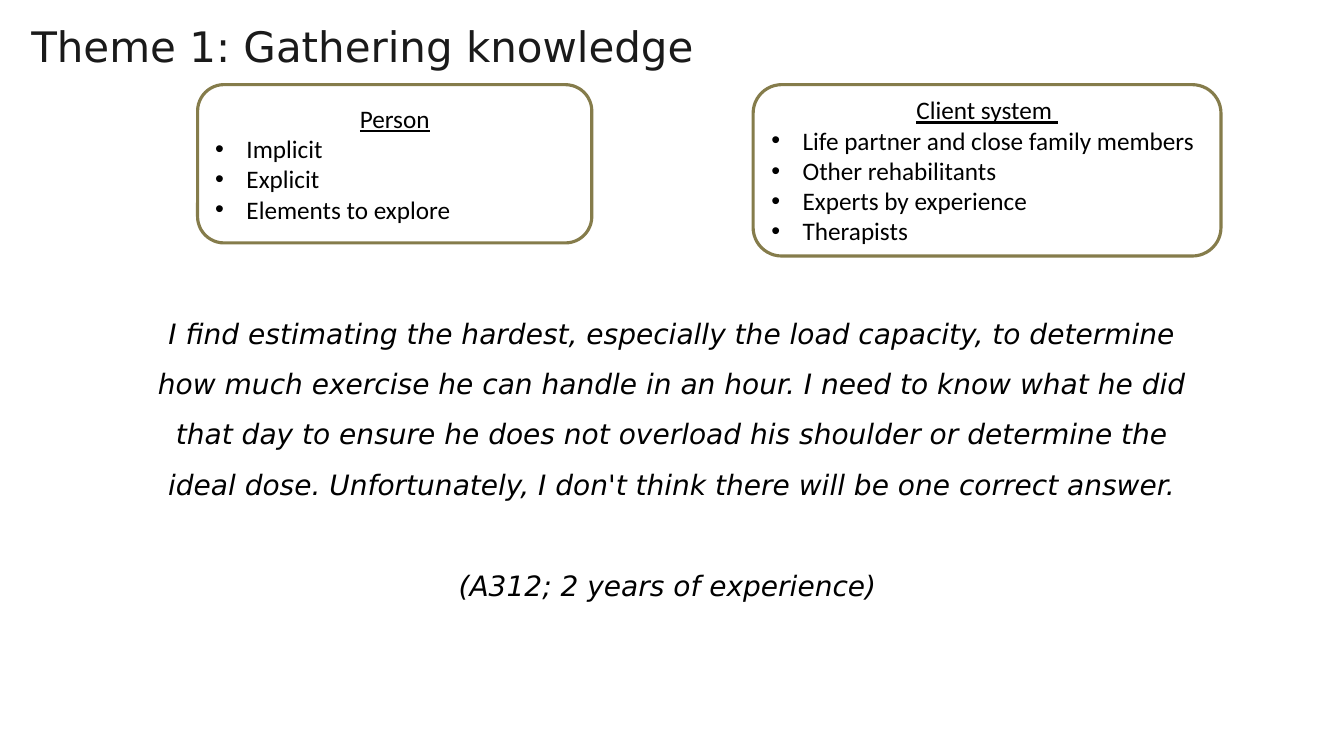
"""Build the slide on gathering knowledge, with two source boxes and a quote."""
from lxml.etree import SubElement
from pptx import Presentation
from pptx.dml.color import RGBColor
from pptx.enum.shapes import MSO_SHAPE
from pptx.enum.text import MSO_ANCHOR, MSO_AUTO_SIZE, PP_ALIGN
from pptx.oxml.ns import qn
from pptx.util import Inches, Pt

INK = RGBColor(0x1A, 0x1A, 0x1A)
BLACK = RGBColor(0, 0, 0)
OLIVE = RGBColor(0x85, 0x7C, 0x4B)

TITLE = {"name": "DejaVu Sans", "size": Pt(30)}
QUOTE = {"name": "DejaVu Sans", "size": Pt(20), "italic": True}
HEADING = {"name": "Calibri", "size": Pt(18), "underline": True}
ITEM = {"name": "Calibri", "size": Pt(18), "underline": False}

BOXES = [
    (1.96, 3.91, 1.57, "Person",
     ["Implicit", "Explicit", "Elements to explore"]),
    (7.47, 4.64, 1.7, "Client system ",
     ["Life partner and close family members", "Other rehabilitants",
      "Experts by experience", "Therapists"]),
]
QUOTE_TEXT = (
    "I find estimating the hardest, especially the load capacity, to determine "
    "how much exercise he can handle in an hour. I need to know what he did "
    "that day to ensure he does not overload his shoulder or determine the "
    "ideal dose. Unfortunately, I don't think there will be one correct answer."
)
CITATION = "(A312; 2 years of experience) "


def write(p, text, style, color=BLACK):
    r = p.add_run()
    r.text = text
    for name, value in style.items():
        setattr(r.font, name, value)
    r.font.color.rgb = color


def add_text_box(s, left, top, width, height):
    tf = s.shapes.add_textbox(
        Inches(left), Inches(top), Inches(width), Inches(height)).text_frame
    tf.word_wrap = True
    tf.auto_size = MSO_AUTO_SIZE.SHAPE_TO_FIT_TEXT
    return tf


prs = Presentation()
prs.slide_width, prs.slide_height = Inches(13.33), Inches(7.5)
s = prs.slides.add_slide(prs.slide_layouts[6])

tf = add_text_box(s, 0.24, 0.13, 11.98, 0.64)
for side in ("left", "top", "right", "bottom"):
    setattr(tf, f"margin_{side}", Inches(0.07))
write(tf.paragraphs[0], "Theme 1: Gathering knowledge", TITLE, INK)

for left, width, height, heading, items in BOXES:
    sp = s.shapes.add_shape(MSO_SHAPE.ROUNDED_RECTANGLE, Inches(left),
                            Inches(0.84), Inches(width), Inches(height))
    sp.shadow.inherit = False
    sp.fill.background()
    sp.line.color.rgb = OLIVE
    sp.line.width = Pt(2.25)
    tf = sp.text_frame
    tf.word_wrap = True
    tf.vertical_anchor = MSO_ANCHOR.MIDDLE
    p = tf.paragraphs[0]
    p.alignment = PP_ALIGN.CENTER
    write(p, heading, HEADING)
    for item in items:
        p = tf.add_paragraph()
        p.alignment = PP_ALIGN.LEFT
        pPr = p._p.get_or_add_pPr()
        pPr.set("marL", str(Inches(0.31)))
        pPr.set("indent", str(-Inches(0.31)))
        SubElement(pPr, qn("a:buFont"), typeface="Arial")
        SubElement(pPr, qn("a:buChar"), char="•")
        write(p, item, ITEM)

tf = add_text_box(s, 1.29, 2.92, 10.75, 3.53)
citation = tf.add_paragraph()
citation.space_before = Pt(36)
for p, text in zip(tf.paragraphs, (QUOTE_TEXT, CITATION)):
    p.alignment = PP_ALIGN.CENTER
    p.line_spacing = 1.5
    write(p, text, QUOTE)

prs.save("out.pptx")
